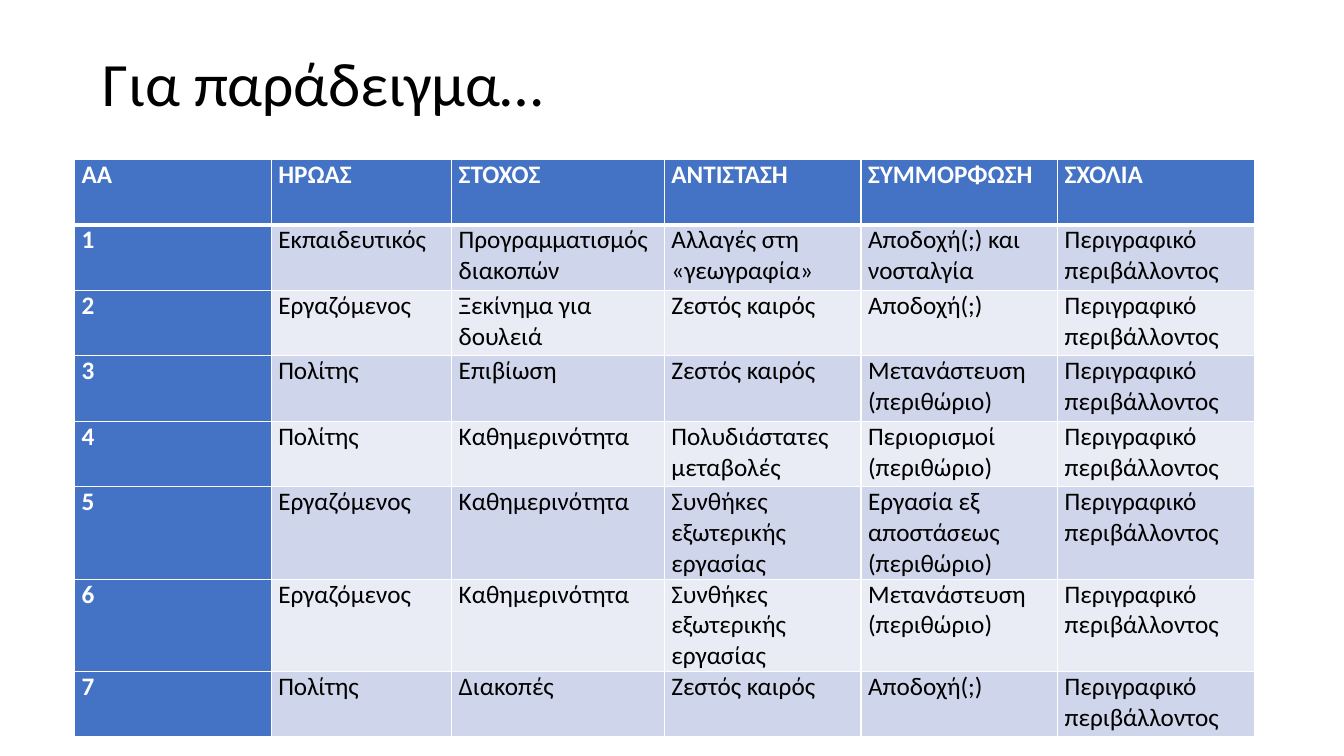
from lxml.etree import SubElement as Sub
from pptx import Presentation
from pptx.dml.color import RGBColor as Rgb
from pptx.enum.text import MSO_ANCHOR as Anchor
from pptx.oxml.ns import qn
from pptx.util import Inches, Pt

TITLE = "Για παράδειγμα…"
HEAD = ["ΑΑ", "ΗΡΩΑΣ", "ΣΤΟΧΟΣ", "ΑΝΤΙΣΤΑΣΗ", "ΣΥΜΜΟΡΦΩΣΗ", "ΣΧΟΛΙΑ"]
NOTE = "Περιγραφικό περιβάλλοντος"
CASES = [
    ("Εκπαιδευτικός", "Προγραμματισμός διακοπών", "Αλλαγές στη «γεωγραφία»",
     "Αποδοχή(;) και νοσταλγία"),
    ("Εργαζόμενος", "Ξεκίνημα για δουλειά", "Ζεστός καιρός", "Αποδοχή(;)"),
    ("Πολίτης", "Επιβίωση", "Ζεστός καιρός", "Μετανάστευση (περιθώριο)"),
    ("Πολίτης", "Καθημερινότητα", "Πολυδιάστατες μεταβολές",
     "Περιορισμοί (περιθώριο)"),
    ("Εργαζόμενος", "Καθημερινότητα", "Συνθήκες εξωτερικής εργασίας",
     "Εργασία εξ αποστάσεως (περιθώριο)"),
    ("Εργαζόμενος", "Καθημερινότητα", "Συνθήκες εξωτερικής εργασίας",
     "Μετανάστευση (περιθώριο)"),
    ("Πολίτης", "Διακοπές", "Ζεστός καιρός", "Αποδοχή(;)"),
]
WIDTHS = [1.95, 1.79, 2.11, 1.95, 1.95, 1.95]
HEIGHTS = [0.65] * 5 + [0.77] * 2 + [0.65]
COLORS = {"head": "4472C4", "odd": "CFD5EA", "even": "E9EBF5",
          "white": "FFFFFF", "black": "000000"}
FONT = "Calibri"


def color(name):
    return Rgb.from_string(COLORS[name])


def style(para, size, tone, bold=False):
    for run in para.runs:
        font = run.font
        font.name, font.size, font.bold = FONT, Pt(size), bold
        font.color.rgb = color(tone)


def border(cell, side, width):
    line = Sub(cell._tc.get_or_add_tcPr(), qn(f"a:ln{side}"), w=str(Pt(width)))
    fill = Sub(line, qn("a:solidFill"))
    Sub(fill, qn("a:srgbClr"), val=COLORS["white"])


def fill_cell(cell, text, row, col):
    label = row == 0 or col == 0
    cell.text = text
    style(cell.text_frame.paragraphs[0], 18, "white" if label else "black", label)
    cell.margin_left = cell.margin_right = Inches(0.07)
    cell.margin_top = cell.margin_bottom = 0
    for side in "LRTB":
        thick = (row == 0 and side == "B") or (row == 1 and side == "T")
        border(cell, side, 3 if thick else 1)
    cell.fill.solid()
    band = "odd" if row % 2 else "even"
    cell.fill.fore_color.rgb = color("head" if label else band)


def main():
    deck = Presentation()
    deck.slide_width, deck.slide_height = Inches(13.33), Inches(7.5)
    slide = deck.slides.add_slide(deck.slide_layouts[5])

    rows = [HEAD] + [[str(num), *case, NOTE] for num, case in enumerate(CASES, 1)]
    frame = slide.shapes.add_table(
        len(rows), len(HEAD), Inches(0.74), Inches(1.58),
        Inches(sum(WIDTHS)), Inches(sum(HEIGHTS)))
    table = frame.table
    for col, width in enumerate(WIDTHS):
        table.columns[col].width = Inches(width)
    for row, texts in enumerate(rows):
        table.rows[row].height = Inches(HEIGHTS[row])
        for col, text in enumerate(texts):
            fill_cell(table.cell(row, col), text, row, col)

    title = slide.shapes.title
    title.left, title.top = Inches(0.92), Inches(0.4)
    title.width, title.height = Inches(11.5), Inches(0.92)
    title.text_frame.text = TITLE
    title.text_frame.vertical_anchor = Anchor.MIDDLE
    para = title.text_frame.paragraphs[0]
    para.alignment = 1
    para.line_spacing = 0.9
    style(para, 44, "black")

    deck.save("out.pptx")


if __name__ == "__main__":
    main()
